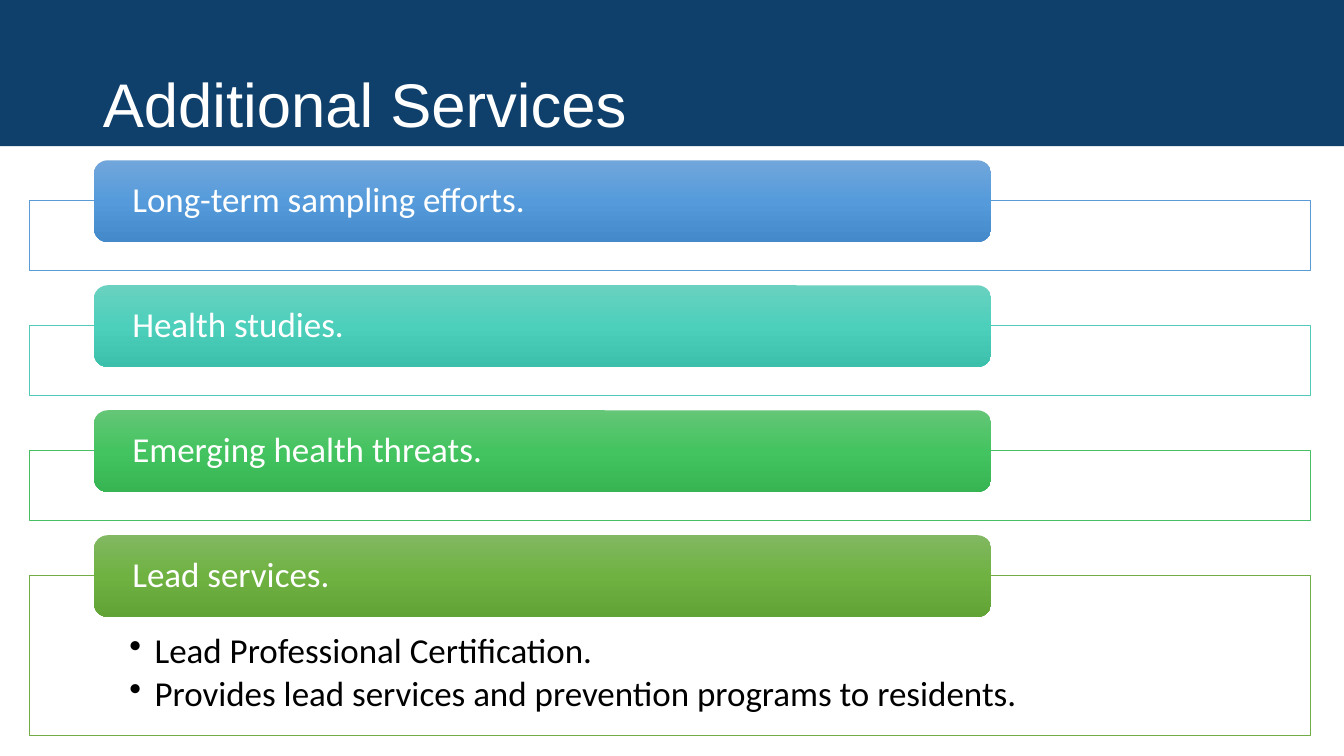
import copy
import pptx
import pptx.dml.color
import pptx.enum.shapes
import pptx.enum.text
import pptx.oxml
import pptx.oxml.ns
import pptx.util

SHAPES = pptx.enum.shapes.MSO_SHAPE
ANCHOR = pptx.enum.text.MSO_ANCHOR
ALIGN = pptx.enum.text.PP_ALIGN
COLUMNS, ROWS = 100, 75

# Heading, outline colour, gradient from top to bottom, bullets
SERVICES = [
    ("Long-term sampling efforts.", "5B9BD5", ("71A6DB", "559BDB", "448ACA"), []),
    ("Health studies.", "52CAB8", ("6AD1C0", "4CD0BC", "3CC0AC"), []),
    ("Emerging health threats.", "49BF64", ("64C677", "44C460", "36B552"), []),
    ("Lead services.", "70AD47", ("81B861", "6FB242", "62A336"), [
        "Lead Professional Certification.",
        "Provides lead services and prevention programs to residents.",
    ]),
]


def color(value):
    return pptx.dml.color.RGBColor.from_string(value)


class ServicesSlide:
    heading_font, body_font = "Arial", "Calibri"
    heading_size, body_size = 44, 25

    def __init__(self, deck):
        self.slide = deck.slides.add_slide(deck.slide_layouts[5])
        self.column = deck.slide_width / COLUMNS
        self.row = deck.slide_height / ROWS

    def place(self, left, top, width, height):
        return (round(left * self.column), round(top * self.row),
                round(width * self.column), round(height * self.row))

    def shape(self, kind, area, fill=None, line=None):
        shape = self.slide.shapes.add_shape(kind, *self.place(*area))
        shape.shadow.inherit = False
        if fill:
            shape.fill.solid()
            shape.fill.fore_color.rgb = color(fill)
        if line:
            shape.line.color.rgb = color(line)
            shape.line.width = pptx.util.Pt(0.5)
        else:
            shape.line.fill.background()
        return shape

    def set_text(self, box, lines, font, size, ink, anchor, margins):
        frame = box.text_frame
        frame.text = "\n".join(lines)
        frame.word_wrap = True
        frame.auto_size = pptx.enum.text.MSO_AUTO_SIZE.NONE
        frame.vertical_anchor = anchor
        (frame.margin_left, frame.margin_top, frame.margin_right,
         frame.margin_bottom) = [pptx.util.Inches(margin) for margin in margins]
        for para in frame.paragraphs:
            para.alignment = ALIGN.LEFT
            para.line_spacing = 0.9
            for span in para.runs:
                span.font.name = font
                span.font.size = pptx.util.Pt(size)
                span.font.color.rgb = color(ink)
        return frame

    def title(self, text, area):
        box = self.slide.shapes.title
        box.left, box.top, box.width, box.height = self.place(*area)
        self.set_text(box, [text], self.heading_font, self.heading_size, "FFFFFF",
                      ANCHOR.BOTTOM, (0.1, 0.05, 0.1, 0.05))

    def band(self, area, fill):
        band = self.shape(SHAPES.RECTANGLE, area, fill)
        # Behind the title
        self.slide.shapes.element.insert(2, band.element)

    def panel(self, area, line, bullets):
        panel = self.shape(SHAPES.RECTANGLE, area, "FFFFFF", line)
        white = panel.element.spPr.find(".//" + pptx.oxml.ns.qn("a:srgbClr"))
        white.append(pptx.oxml.parse_xml(
            f'<a:alpha {pptx.oxml.ns.nsdecls("a")} val="90000"/>'))
        if not bullets:
            return
        frame = self.set_text(panel, bullets, self.body_font, self.body_size, "000000",
                              ANCHOR.TOP, (0.99, 0.57, 0.99, 0.19))
        for para in frame.paragraphs:
            para.space_after = pptx.util.Pt(3.75)
            properties = para._p.get_or_add_pPr()
            indent = pptx.util.Inches(0.25)
            properties.set("marL", str(indent))
            properties.set("indent", str(-indent))
            properties.append(pptx.oxml.parse_xml(
                f'<a:buChar {pptx.oxml.ns.nsdecls("a")} char="•"/>'))

    def heading(self, area, text, shades):
        card = self.shape(SHAPES.ROUNDED_RECTANGLE, area)
        card.fill.gradient()
        card.fill.gradient_angle = 270
        stop_list = card.element.spPr.find(".//" + pptx.oxml.ns.qn("a:gsLst"))
        stop_list.insert(1, copy.deepcopy(stop_list[0]))
        for index, (stop, shade) in enumerate(zip(card.fill.gradient_stops, shades)):
            stop.position = index / 2
            stop.color.rgb = color(shade)
        self.set_text(card, [text], self.body_font, self.body_size, "FFFFFF",
                      ANCHOR.MIDDLE, (0.34, 0, 0.34, 0))


def main():
    deck = pptx.Presentation()
    deck.slide_width = pptx.util.Inches(13.33)
    deck.slide_height = pptx.util.Inches(7.5)
    page = ServicesSlide(deck)

    # Header
    page.band((0, 0, COLUMNS, 14.5), "0F406B")
    page.title("Additional Services", (6.9, 0, 74.1, 14.5))

    # One outlined panel per service, with its heading over the top edge
    for index, (text, line, shades, bullets) in enumerate(SERVICES):
        top = 15.9 + index * 12.4
        page.panel((2.2, top + 4, 95.3, 15.9 if bullets else 6.9), line, bullets)
        page.heading((7, top, 66.75, 8.1), text, shades)

    deck.save("out.pptx")


if __name__ == "__main__":
    main()
